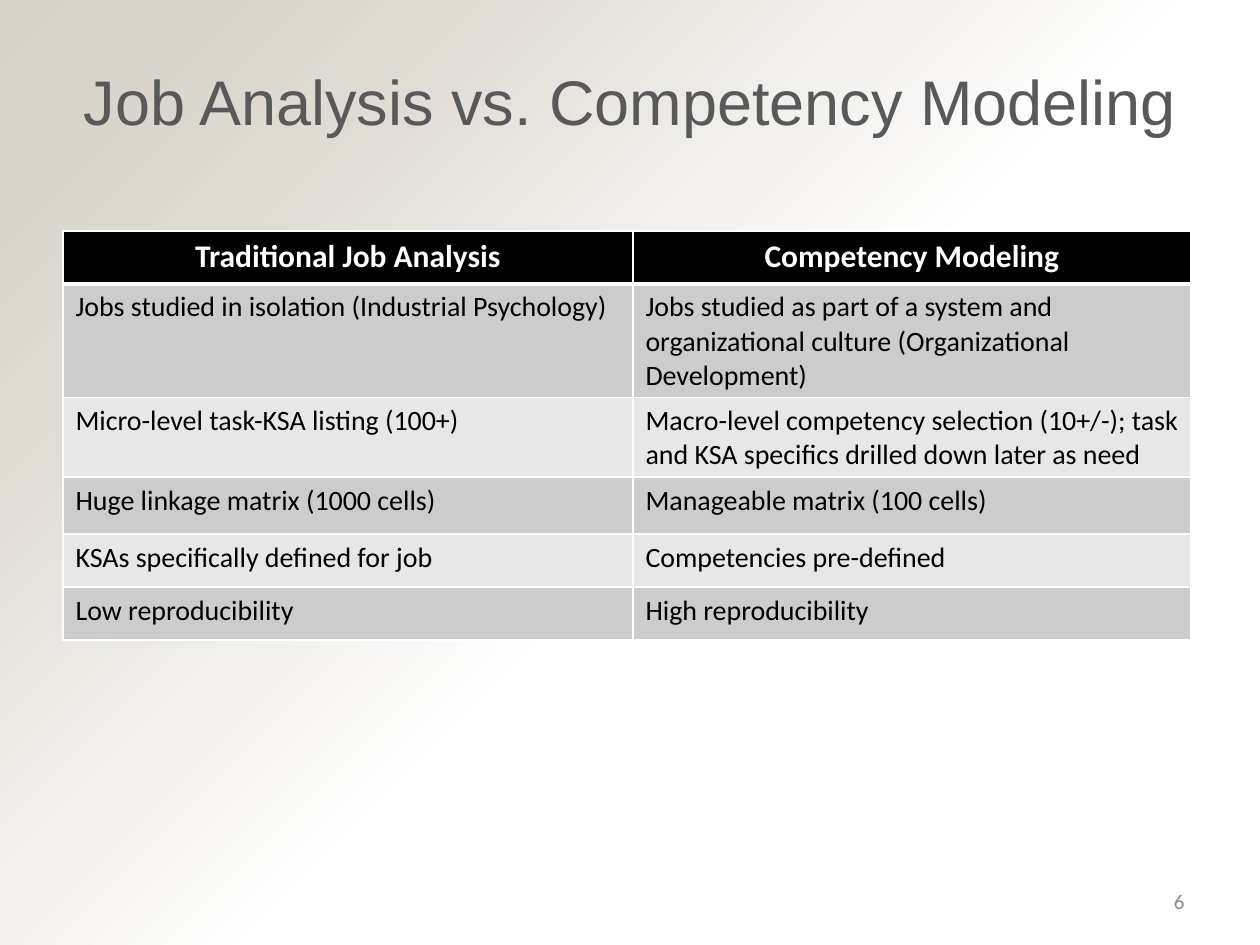
from pptx import Presentation
from pptx.dml.color import RGBColor
from pptx.enum.text import MSO_ANCHOR, PP_ALIGN
from pptx.oxml import parse_xml
from pptx.oxml.ns import nsdecls
from pptx.util import Emu, Pt

WIDTH, HEIGHT = 1260, 945
SCALE = 9144000 / WIDTH
COLORS = {
    "title": "595959",
    "number": "8C8C8C",
    "text": "000000",
    "header": "000000",
    "odd": "CCCCCC",
    "even": "E7E7E7",
    "white": "FFFFFF",
    "sand": "DFDBD3",
    "tan": "D5D0C5",
}


def px(n):
    return Emu(round(n * SCALE))


class SlideBuilder:
    def __init__(self, slide):
        self.s = slide

    def background(self, stops):
        """Circular gradient that spreads from the bottom right corner."""
        gs = "".join(
            f'<a:gs pos="{pos * 1000}"><a:srgbClr val="{COLORS[color]}"/></a:gs>'
            for pos, color in stops
        )
        self.s.element.cSld.insert(0, parse_xml(
            f'<p:bg {nsdecls("p", "a")}><p:bgPr><a:gradFill rotWithShape="1">'
            f'<a:gsLst>{gs}</a:gsLst><a:path path="circle">'
            '<a:fillToRect l="100000" t="100000"/></a:path>'
            '</a:gradFill><a:effectLst/></p:bgPr></p:bg>'
        ))

    def run(self, tf, text, size, color, font="Calibri", bold=False, align=PP_ALIGN.LEFT):
        p = tf.paragraphs[0]
        p.alignment = align
        r = p.add_run()
        r.text = text
        r.font.size = Pt(size)
        r.font.name = font
        r.font.bold = bold
        r.font.color.rgb = RGBColor.from_string(COLORS[color])

    def text(self, x, y, w, h, text, size, color, **style):
        tf = self.s.shapes.add_textbox(px(x), px(y), px(w), px(h)).text_frame
        tf.word_wrap = True
        tf.vertical_anchor = MSO_ANCHOR.MIDDLE
        self.run(tf, text, size, color, **style)

    def borders(self, cell, **widths):
        tcPr = cell._tc.get_or_add_tcPr()
        for side in "LRTB":
            tcPr.append(parse_xml(
                f'<a:ln{side} {nsdecls("a")} w="{Pt(widths.get(side, 1))}"><a:solidFill>'
                f'<a:srgbClr val="{COLORS["white"]}"/></a:solidFill></a:ln{side}>'
            ))

    def table(self, x, y, col_widths, row_heights, rows):
        table = self.s.shapes.add_table(
            len(rows), len(col_widths), px(x), px(y),
            px(sum(col_widths)), px(sum(row_heights)),
        ).table
        for col, w in zip(table.columns, col_widths):
            col.width = px(w)
        for i, (row, h, texts) in enumerate(zip(table.rows, row_heights, rows)):
            row.height = px(h)
            for cell, text in zip(row.cells, texts):
                if i == 0:
                    fill = "header"
                    self.borders(cell, B=3)
                    self.run(cell.text_frame, text, 18, "white",
                             bold=True, align=PP_ALIGN.CENTER)
                else:
                    fill = "odd" if i % 2 else "even"
                    self.borders(cell, T=3 if i == 1 else 1)
                    self.run(cell.text_frame, text, 16, "text")
                cell.fill.solid()
                cell.fill.fore_color.rgb = RGBColor.from_string(COLORS[fill])


def main():
    prs = Presentation()
    prs.slide_width, prs.slide_height = px(WIDTH), px(HEIGHT)
    slide = SlideBuilder(prs.slides.add_slide(prs.slide_layouts[6]))
    slide.background([(45, "white"), (80, "sand"), (100, "tan")])

    # Title
    slide.text(63, 21, 1134, 158, "Job Analysis vs. Competency Modeling",
               36, "title", font="Arial", align=PP_ALIGN.CENTER)

    # Comparison table
    slide.table(63, 231, [570, 558], [53, 92, 64, 57, 53, 53], [
        ("Traditional Job Analysis", "Competency Modeling"),
        ("Jobs studied in isolation (Industrial Psychology)",
         "Jobs studied as part of a system and organizational culture "
         "(Organizational Development)"),
        ("Micro-level task-KSA listing (100+)",
         "Macro-level competency selection (10+/-); task and KSA specifics "
         "drilled down later as need"),
        ("Huge linkage matrix (1000 cells)", "Manageable matrix (100 cells)"),
        ("KSAs specifically defined for job", "Competencies pre-defined"),
        ("Low reproducibility", "High reproducibility"),
    ])

    # Slide number
    slide.text(903, 876, 294, 50, "6", 12, "number", align=PP_ALIGN.RIGHT)

    prs.save("out.pptx")


if __name__ == "__main__":
    main()
